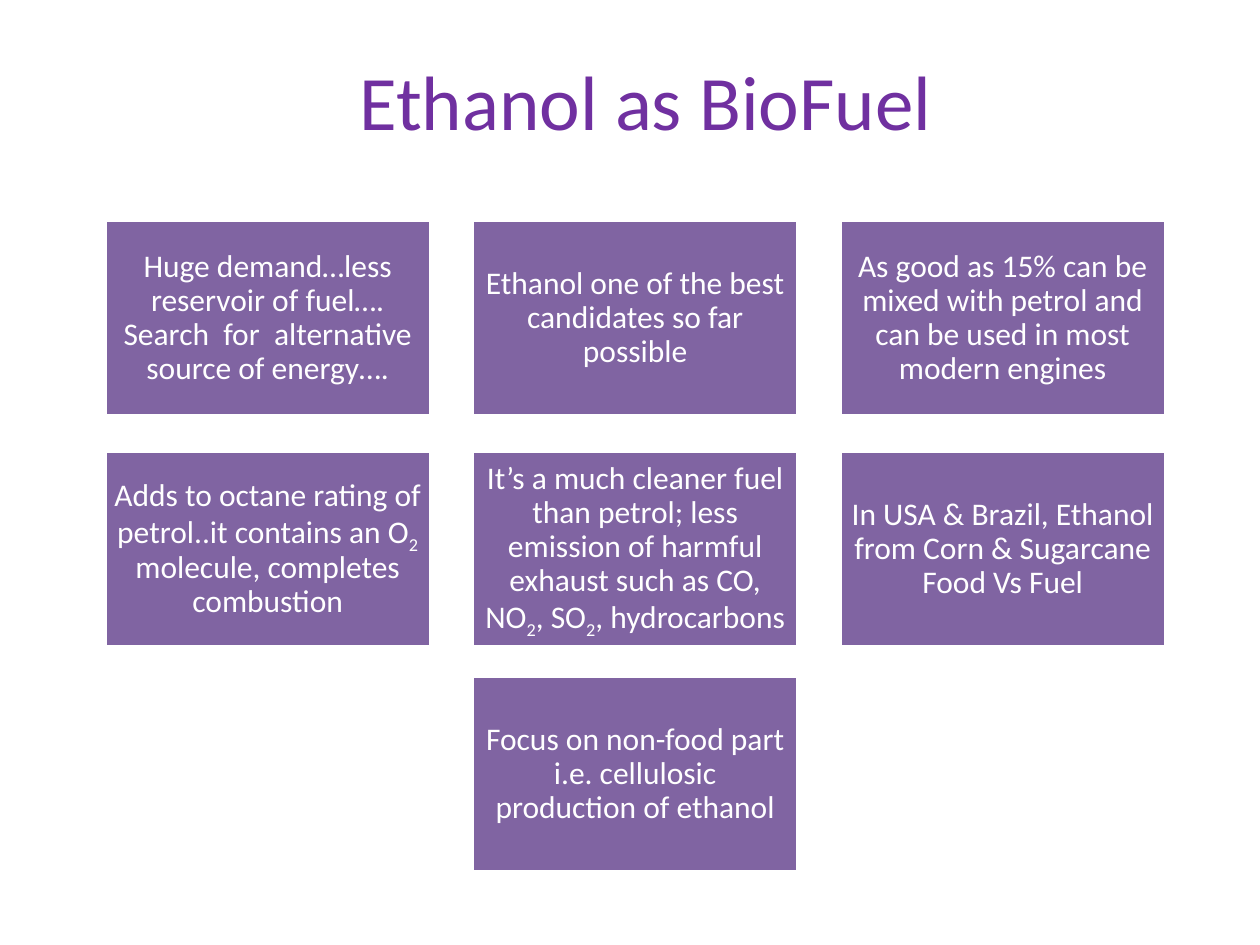
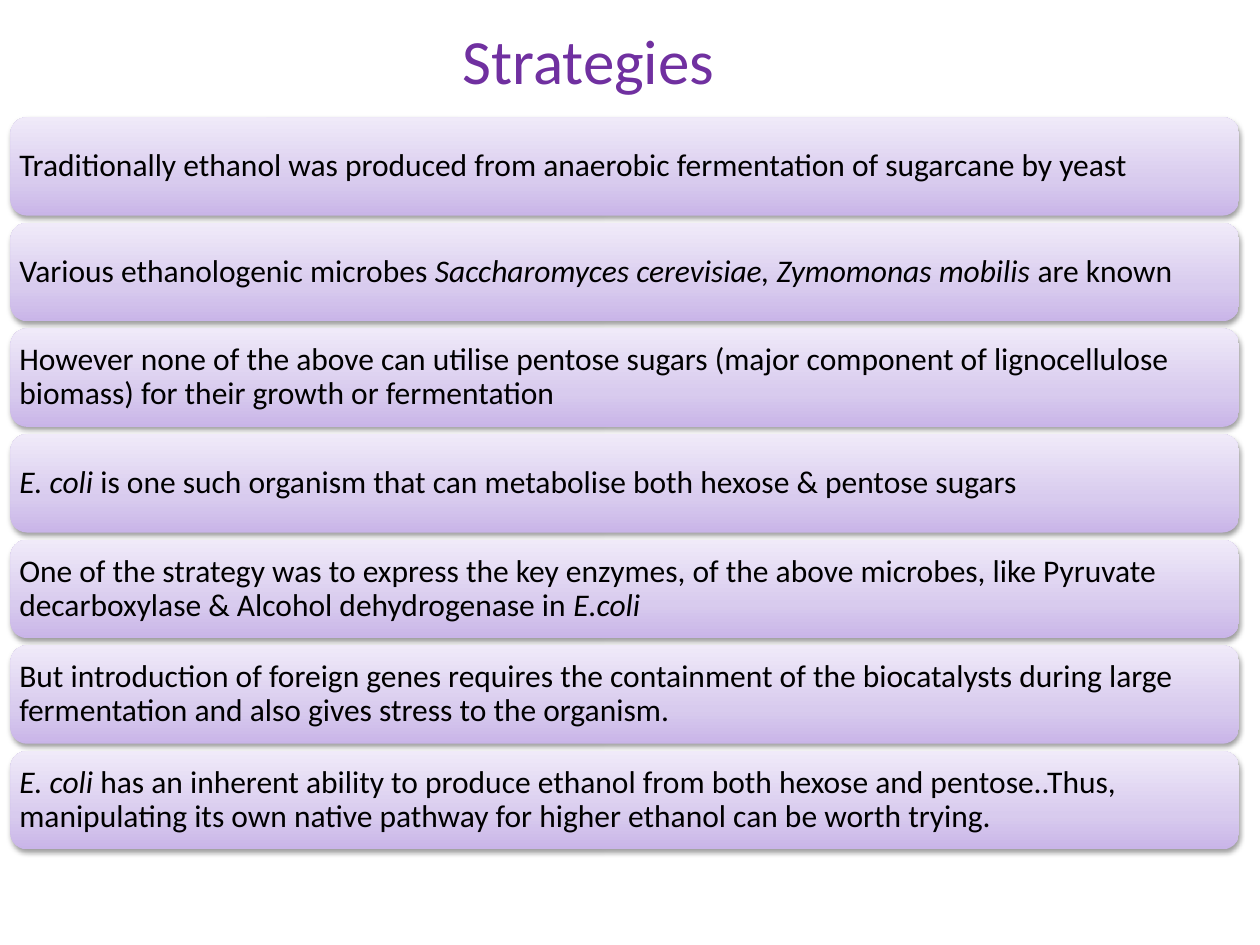
from lxml import etree
from pptx import Presentation
from pptx.dml.color import RGBColor
from pptx.enum.shapes import MSO_SHAPE
from pptx.enum.text import MSO_ANCHOR, PP_ALIGN
from pptx.oxml import parse_xml
from pptx.oxml.ns import nsdecls, qn
from pptx.util import Pt

RECTANGLE = MSO_SHAPE.RECTANGLE
ROUNDED = MSO_SHAPE.ROUNDED_RECTANGLE
MIDDLE = MSO_ANCHOR.MIDDLE
CENTER, LEFT = PP_ALIGN.CENTER, PP_ALIGN.LEFT
TITLE_ONLY = 5

FONT = "Calibri"
COLORS = {
    "title": "7030A0",
    "tile": "8064A2",
    "white": "FFFFFF",
    "black": "000000",
    "card_bottom": "C9B5E8",
    "card_middle": "D8CBEE",
    "card_top": "F0EAF9",
}
CARD_STOPS = [(0, "card_bottom"), (35, "card_middle"), (100, "card_top")]

# Parts between bars are subscripts.
ETHANOL_FACTS = [
    "Huge demand…less reservoir of fuel…. Search  for  alternative source of energy….",
    "Ethanol one of the best candidates so far possible",
    "As good as 15% can be mixed with petrol and can be used in most modern engines",
    "Adds to octane rating of petrol..it contains an O|2| molecule, completes combustion",
    "It’s a much cleaner fuel than petrol; less emission of harmful exhaust such as CO, "
    "NO|2|, SO|2|, hydrocarbons",
    "In USA & Brazil, Ethanol from Corn & Sugarcane Food Vs Fuel",
    "Focus on non-food part i.e. cellulosic production of ethanol",
]
# Parts between bars are italic species names.
STRATEGIES = [
    "Traditionally ethanol was produced from anaerobic fermentation of sugarcane by yeast",
    "Various ethanologenic microbes |Saccharomyces cerevisiae, Zymomonas mobilis |are known",
    "However none of the above can utilise pentose sugars (major component of "
    "lignocellulose biomass) for their growth or fermentation",
    "|E. coli |is one such organism that can metabolise both hexose & pentose sugars",
    "One of the strategy was to express the key enzymes, of the above microbes, like "
    "Pyruvate decarboxylase & Alcohol dehydrogenase in |E.coli|",
    "But introduction of foreign genes requires the containment of the biocatalysts "
    "during large fermentation and also gives stress to the organism.",
    "|E. coli |has an inherent ability to produce ethanol from both hexose and "
    "pentose..Thus, manipulating its own native pathway for higher ethanol can be "
    "worth trying.",
]
TILE_COLUMNS = [60, 270, 480]
TILE_ROWS = [126, 258, 386.6]
TILE_SIZE = (186, 111.6)
CARD_LEFT, CARD_TOP, CARD_PITCH = 6, 67, 60.36
CARD_SIZE = (702, 56.2)


def rgb(name):
    return RGBColor.from_string(COLORS[name])


def style_font(run, size, color):
    run.font.name = FONT
    run.font.size = Pt(size)
    run.font.color.rgb = rgb(color)


def make_subscript(run):
    run.font._element.set("baseline", "-25000")


def make_italic(run):
    run.font.italic = True


def add_titled_slide(prs, title, left, top, size):
    slide = prs.slides.add_slide(prs.slide_layouts[TITLE_ONLY])
    heading = slide.shapes.title
    heading.left, heading.top = Pt(left), Pt(top)
    heading.width, heading.height = Pt(642), Pt(78)
    heading.text_frame.text = title
    heading.text_frame.vertical_anchor = MIDDLE
    paragraph = heading.text_frame.paragraphs[0]
    paragraph.alignment = CENTER
    style_font(paragraph.runs[0], size, "title")
    return slide


def add_panel(slide, kind, left, top, size, side_inset):
    width, height = size
    panel = slide.shapes.add_shape(kind, Pt(left), Pt(top), Pt(width), Pt(height))
    panel.shadow.inherit = False
    frame = panel.text_frame
    frame.word_wrap = True
    frame.vertical_anchor = MIDDLE
    frame.margin_left = frame.margin_right = Pt(side_inset)
    frame.margin_top = frame.margin_bottom = Pt(5)
    return panel


def write_marked_text(panel, text, alignment, color, emphasize):
    """Write one paragraph, emphasizing each part between bars."""
    paragraph = panel.text_frame.paragraphs[0]
    paragraph.alignment = alignment
    paragraph.line_spacing = 0.9
    for position, part in enumerate(text.split("|")):
        if not part:
            continue
        run = paragraph.add_run()
        run.text = part
        style_font(run, 18, color)
        if position % 2:
            emphasize(run)


def add_fact_tile(slide, fact, left, top):
    tile = add_panel(slide, RECTANGLE, left, top, TILE_SIZE, 5)
    tile.fill.solid()
    tile.fill.fore_color.rgb = rgb("tile")
    tile.line.color.rgb = rgb("white")
    tile.line.width = Pt(2)
    write_marked_text(tile, fact, CENTER, "white", make_subscript)


def apply_card_gradient(card):
    stops = "".join(
        f'<a:gs pos="{percent * 1000}"><a:srgbClr val="{COLORS[name]}"/></a:gs>'
        for percent, name in CARD_STOPS
    )
    gradient = parse_xml(
        f'<a:gradFill {nsdecls("a")} rotWithShape="1"><a:gsLst>{stops}</a:gsLst>'
        '<a:lin ang="16200000" scaled="1"/></a:gradFill>'
    )
    card._element.spPr.find(qn("a:prstGeom")).addnext(gradient)


def apply_card_shadow(card):
    effects = card._element.spPr.find(qn("a:effectLst"))
    shadow = etree.SubElement(
        effects, qn("a:outerShdw"), blurRad=str(Pt(3.1)), dist=str(Pt(1.6)),
        dir="5400000", rotWithShape="0",
    )
    color = etree.SubElement(shadow, qn("a:srgbClr"), val=COLORS["black"])
    etree.SubElement(color, qn("a:alpha"), val="38000")


def add_strategy_card(slide, strategy, top):
    card = add_panel(slide, ROUNDED, CARD_LEFT, top, CARD_SIZE, 2.3)
    card.line.fill.background()
    apply_card_gradient(card)
    apply_card_shadow(card)
    write_marked_text(card, strategy, LEFT, "black", make_italic)


def build_ethanol_slide(prs):
    slide = add_titled_slide(prs, "Ethanol as BioFuel", 48, 18, 44)
    cells = [(left, top) for top in TILE_ROWS[:2] for left in TILE_COLUMNS]
    cells.append((TILE_COLUMNS[1], TILE_ROWS[2]))
    for fact, (left, top) in zip(ETHANOL_FACTS, cells):
        add_fact_tile(slide, fact, left, top)


def build_strategies_slide(prs):
    slide = add_titled_slide(prs, "Strategies", 15.3, -5, 36)
    for row, strategy in enumerate(STRATEGIES):
        add_strategy_card(slide, strategy, CARD_TOP + row * CARD_PITCH)


def main():
    prs = Presentation()
    prs.slide_width, prs.slide_height = Pt(720), Pt(540)
    build_ethanol_slide(prs)
    build_strategies_slide(prs)
    prs.save("out.pptx")


if __name__ == "__main__":
    main()
